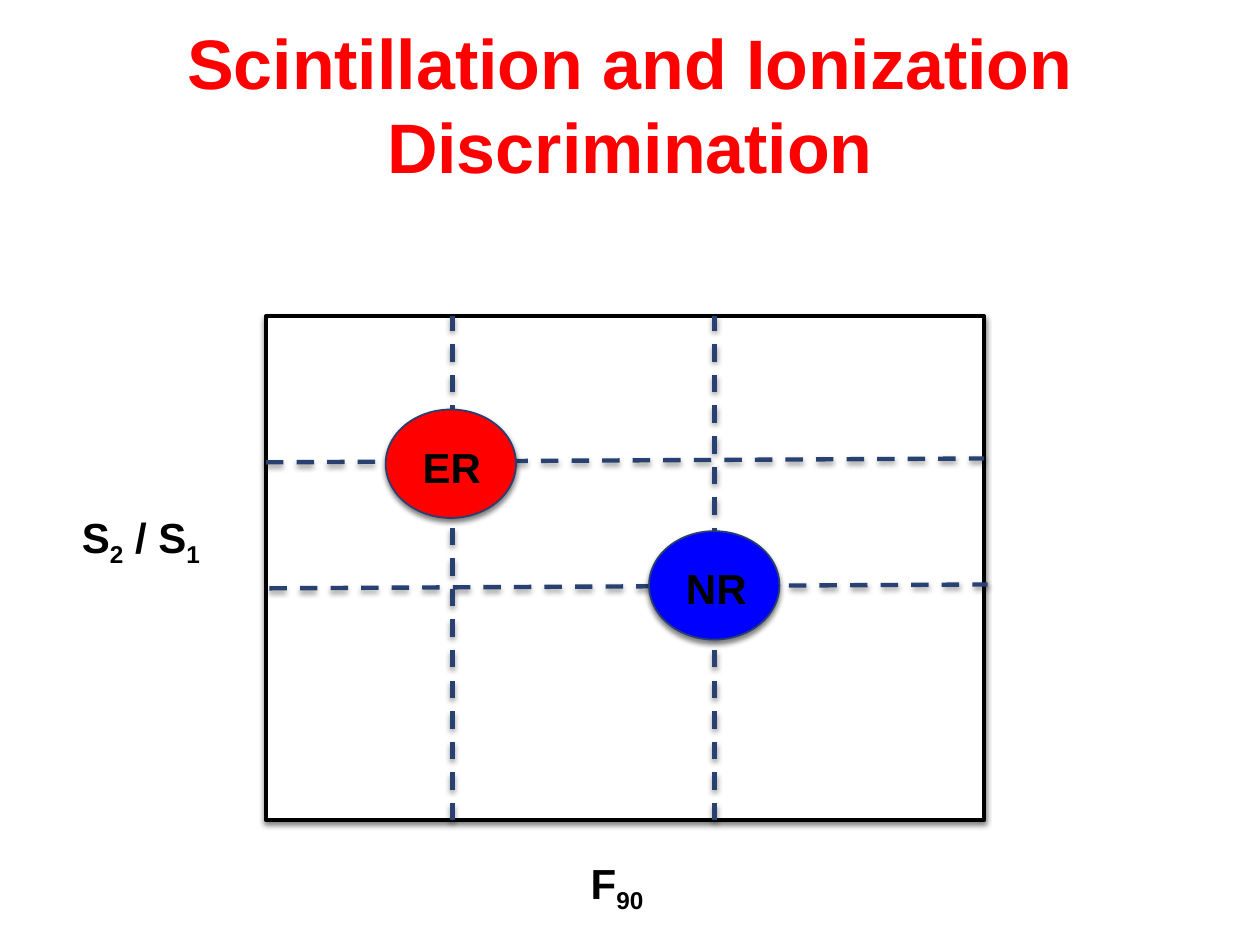
from lxml.etree import SubElement
from pptx import Presentation
from pptx.dml.color import RGBColor
from pptx.enum.dml import MSO_LINE_DASH_STYLE as Dash
from pptx.enum.shapes import MSO_CONNECTOR_TYPE as Connector, MSO_SHAPE as Shape
from pptx.enum.text import MSO_ANCHOR as Anchor, MSO_AUTO_SIZE as AutoSize, PP_ALIGN as Align
from pptx.oxml.ns import qn
from pptx.util import Pt

COLORS = {"title": "FF0000", "ink": "000000", "paper": "FFFFFF", "guide": "294171",
          "rim": "263F70", "electron": "FF0000", "nuclear": "0000FF"}
TITLE_FONT = {"name": "Arial", "size": Pt(40), "bold": True}
LABEL_FONT = {"name": "Arial", "size": Pt(24), "bold": True}


def color(name):
    """Return the named colour."""
    return RGBColor.from_string(COLORS[name])


def format_font(font, values, color_name):
    """Set font attributes and colour."""
    for key, value in values.items():
        setattr(font, key, value)
    font.color.rgb = color(color_name)


def cast_shadow(shape, blur, distance, opacity):
    """Give a shape or connector a soft shadow straight below."""
    properties = shape._element.spPr
    effects = properties.find(qn("a:effectLst"))
    if effects is None:
        effects = SubElement(properties, qn("a:effectLst"))
    shadow = SubElement(effects, qn("a:outerShdw"), blurRad=str(Pt(blur)),
                        dist=str(Pt(distance)), dir="5400000", rotWithShape="0")
    tone = SubElement(shadow, qn("a:srgbClr"), val=COLORS["ink"])
    SubElement(tone, qn("a:alpha"), val=str(opacity * 1000))


def add_title(page, left, top, width, height):
    """Place and format the slide title."""
    title = page.shapes.title
    title.left, title.top, title.width, title.height = map(Pt, (left, top, width, height))
    frame = title.text_frame
    frame.word_wrap = True
    frame.vertical_anchor = Anchor.MIDDLE
    para = frame.paragraphs[0]
    para.alignment = Align.CENTER
    span = para.add_run()
    span.text = "Scintillation and Ionization Discrimination"
    format_font(span.font, TITLE_FONT, "title")


def add_label(page, left, top, width, height, *parts):
    """Add a label whose parts alternate between normal and subscript text."""
    box = page.shapes.add_textbox(*map(Pt, (left, top, width, height)))
    frame = box.text_frame
    frame.word_wrap = False
    frame.auto_size = AutoSize.SHAPE_TO_FIT_TEXT
    for index, text in enumerate(parts):
        span = frame.paragraphs[0].add_run()
        span.text = text
        format_font(span.font, LABEL_FONT, "ink")
        if index % 2:
            span._r.get_or_add_rPr().set("baseline", "-25000")


def add_filled(page, kind, left, top, width, height, fill, line, weight):
    """Add an outlined shape with a shadow."""
    shape = page.shapes.add_shape(kind, *map(Pt, (left, top, width, height)))
    shape.fill.solid()
    shape.fill.fore_color.rgb = color(fill)
    shape.line.color.rgb = color(line)
    shape.line.width = Pt(weight)
    shape.shadow.inherit = False
    cast_shadow(shape, 3, 2, 50)


def add_guide(page, *ends):
    """Add a dashed guide line."""
    guide = page.shapes.add_connector(Connector.STRAIGHT, *map(Pt, ends))
    guide.line.color.rgb = color("guide")
    guide.line.width = Pt(2.5)
    guide.line.dash_style = Dash.DASH
    cast_shadow(guide, 3.1, 1.6, 38)


def add_plot(page, left, top, width, height):
    """Draw the plot frame, its guides, both populations and axis labels."""
    add_filled(page, Shape.RECTANGLE, left, top, width, height, "paper", "ink", 2.25)
    add_label(page, left + 178.5, top + height + 17.5, 47.5, 36, "F", "90")
    add_label(page, left - 112.3, top + 108, 85, 36, "S", "2", " / S", "1")
    for shift, drop in ((0, 83.5), (2, 155.5)):
        add_guide(page, left + shift, top + drop, left + width + shift, top + drop - 2.2)
    for offset in (106.5, 256.3):
        add_guide(page, left + offset, top + height, left + offset, top)
    populations = (("ER", "electron", 68.4, 53.3, 48.2), ("NR", "nuclear", 218.9, 122.8, 49.7))
    for _, fill, across, down, _ in populations:
        add_filled(page, Shape.OVAL, left + across, top + down, 74.5, 62, fill, "rim", 1)
    for name, _, across, down, label_width in populations:
        add_label(page, left + across + 14, top + down + 14.6, label_width, 36, name)


def main():
    """Build and save the slide."""
    deck = Presentation()
    deck.slide_width, deck.slide_height = Pt(720), Pt(540)
    page = deck.slides.add_slide(deck.slide_layouts[5])
    add_title(page, 54, 5, 612, 108)
    add_plot(page, 152, 180.7, 410.4, 288)
    deck.save("out.pptx")


if __name__ == "__main__":
    main()
